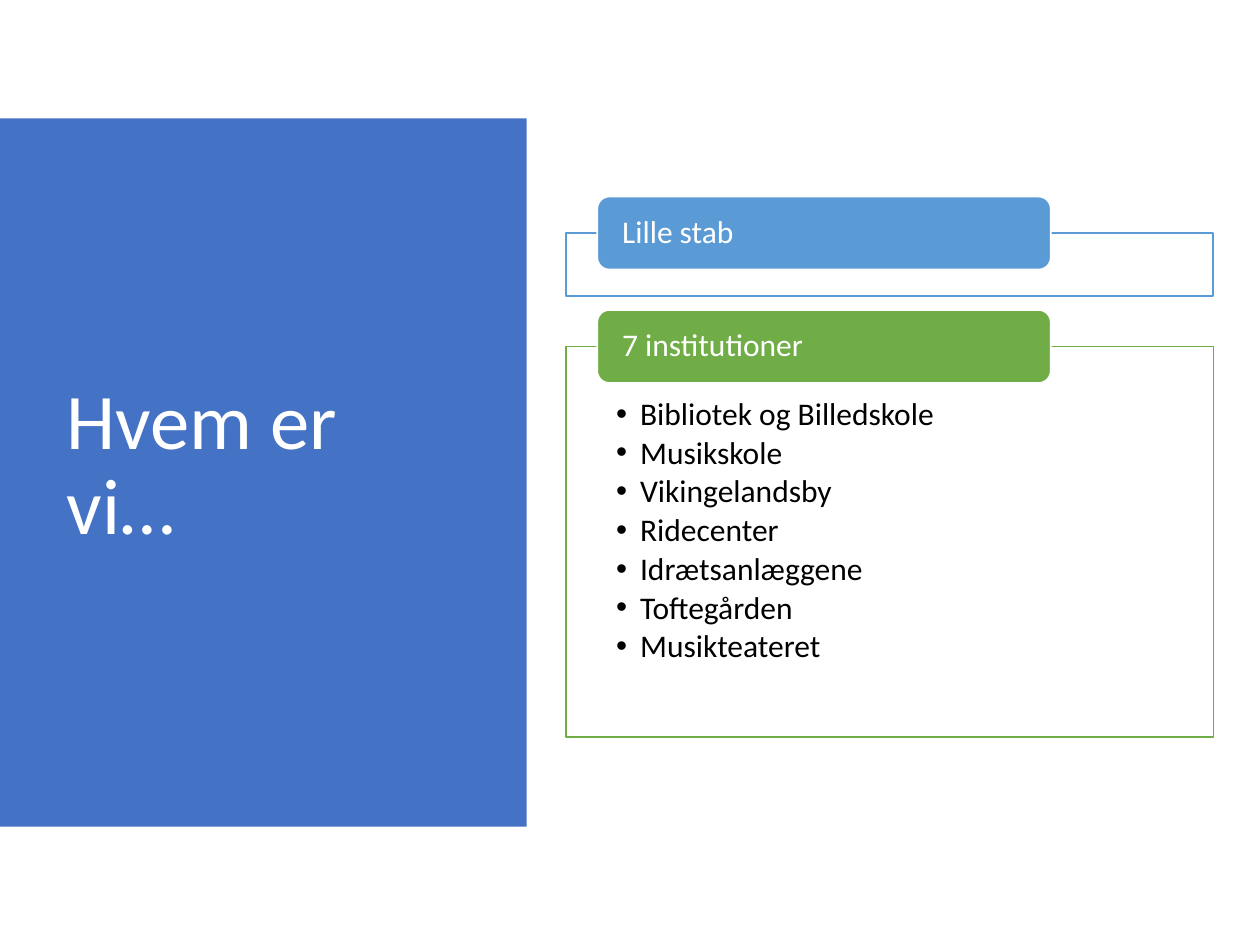
from lxml import etree
from pptx import Presentation
from pptx.dml.color import RGBColor
from pptx.enum import shapes, text
from pptx.oxml import ns
from pptx.util import Inches, Pt

TITLE = "Hvem er vi…"
# label, frame top, frame height, colour name, items
GROUPS = [
    ("Lille stab", 1.85, 0.5, "blue", []),
    ("7 institutioner", 2.75, 3.1, "green", [
        "Bibliotek og Billedskole", "Musikskole", "Vikingelandsby", "Ridecenter",
        "Idrætsanlæggene", "Toftegården", "Musikteateret"]),
]
THEME = {
    "font": "Calibri", "title_size": 45, "text_size": 18,
    "panel": "4472C4", "blue": "5B9BD5", "green": "70AD47",
    "white": "FFFFFF", "black": "000000",
}
FRAME_LEFT, FRAME_WIDTH = 4.49, 5.14
LABEL_LEFT, LABEL_WIDTH, LABEL_HEIGHT = 4.74, 3.6, 0.58
LABEL_RISE = 0.29  # how far a label stands above its frame
BULLET_INDENT = 0.19


def color(name):
    return RGBColor.from_string(THEME[name])


def place(shape, left, top, width, height):
    box = {"left": left, "top": top, "width": width, "height": height}
    for name, value in box.items():
        setattr(shape, name, Inches(value))


def paint(shape, fill, line=None):
    shape.fill.solid()
    shape.fill.fore_color.rgb = color(fill)
    if line:
        shape.line.color.rgb = color(line)
        shape.line.width = Pt(1)
    else:
        shape.line.fill.background()


def add_shape(slide, kind, box, fill, line=None):
    shape = slide.shapes.add_shape(kind, *map(Inches, box))
    shape.shadow.inherit = False
    paint(shape, fill, line)
    return shape


def add_bullet(paragraph):
    properties = paragraph._p.get_or_add_pPr()
    properties.set("marL", str(Inches(BULLET_INDENT)))
    properties.set("indent", str(-Inches(BULLET_INDENT)))
    etree.SubElement(properties, ns.qn("a:buChar"), char="•")


def write(shape, lines, size, ink, anchor, insets, space_after=0, bullets=False):
    """Fill a shape with left-aligned lines; insets are left, top, right, bottom."""
    frame = shape.text_frame
    frame.text = "\n".join(lines)
    sides = ("margin_left", "margin_top", "margin_right", "margin_bottom")
    formats = {"word_wrap": True, "auto_size": text.MSO_AUTO_SIZE.NONE,
               "vertical_anchor": anchor, **dict(zip(sides, map(Inches, insets)))}
    for name, value in formats.items():
        setattr(frame, name, value)
    paragraph_formats = {"alignment": text.PP_ALIGN.LEFT, "line_spacing": 0.9,
                         "space_before": Pt(0), "space_after": Pt(space_after)}
    for paragraph in frame.paragraphs:
        if bullets:
            add_bullet(paragraph)
        for name, value in paragraph_formats.items():
            setattr(paragraph, name, value)
        for run in paragraph.runs:
            run.font.name = THEME["font"]
            run.font.size = Pt(THEME[size])
            run.font.color.rgb = color(ink)


def add_group(slide, body, label, top, height, accent, items):
    box = (FRAME_LEFT, top, FRAME_WIDTH, height)
    if items:
        place(body, *box)
        paint(body, "white", accent)
        write(body, items, "text_size", "black", text.MSO_ANCHOR.TOP,
              (0.4, 0.41, 0.4, 0.14), space_after=2.7, bullets=True)
    else:
        add_shape(slide, shapes.MSO_SHAPE.RECTANGLE, box, "white", accent)
    tab = add_shape(slide, shapes.MSO_SHAPE.ROUNDED_RECTANGLE,
                    (LABEL_LEFT, top - LABEL_RISE, LABEL_WIDTH, LABEL_HEIGHT),
                    accent, "white")
    write(tab, [label], "text_size", "white", text.MSO_ANCHOR.MIDDLE,
          (0.17, 0.03, 0.17, 0.03))


def main():
    presentation = Presentation()
    presentation.slide_width, presentation.slide_height = Inches(10), Inches(7.5)
    slide = presentation.slides.add_slide(presentation.slide_layouts[1])
    title, body = slide.placeholders

    add_shape(slide, shapes.MSO_SHAPE.RECTANGLE, (0, 0.94, 4.18, 5.62), "panel")
    place(title, 0.43, 1.45, 3.12, 4.51)
    write(title, [TITLE], "title_size", "white", text.MSO_ANCHOR.MIDDLE,
          (0.1, 0.05, 0.1, 0.05))
    title.element.getparent().append(title.element)  # in front of the panel

    for group in GROUPS:
        add_group(slide, body, *group)
    presentation.save("out.pptx")


if __name__ == "__main__":
    main()
